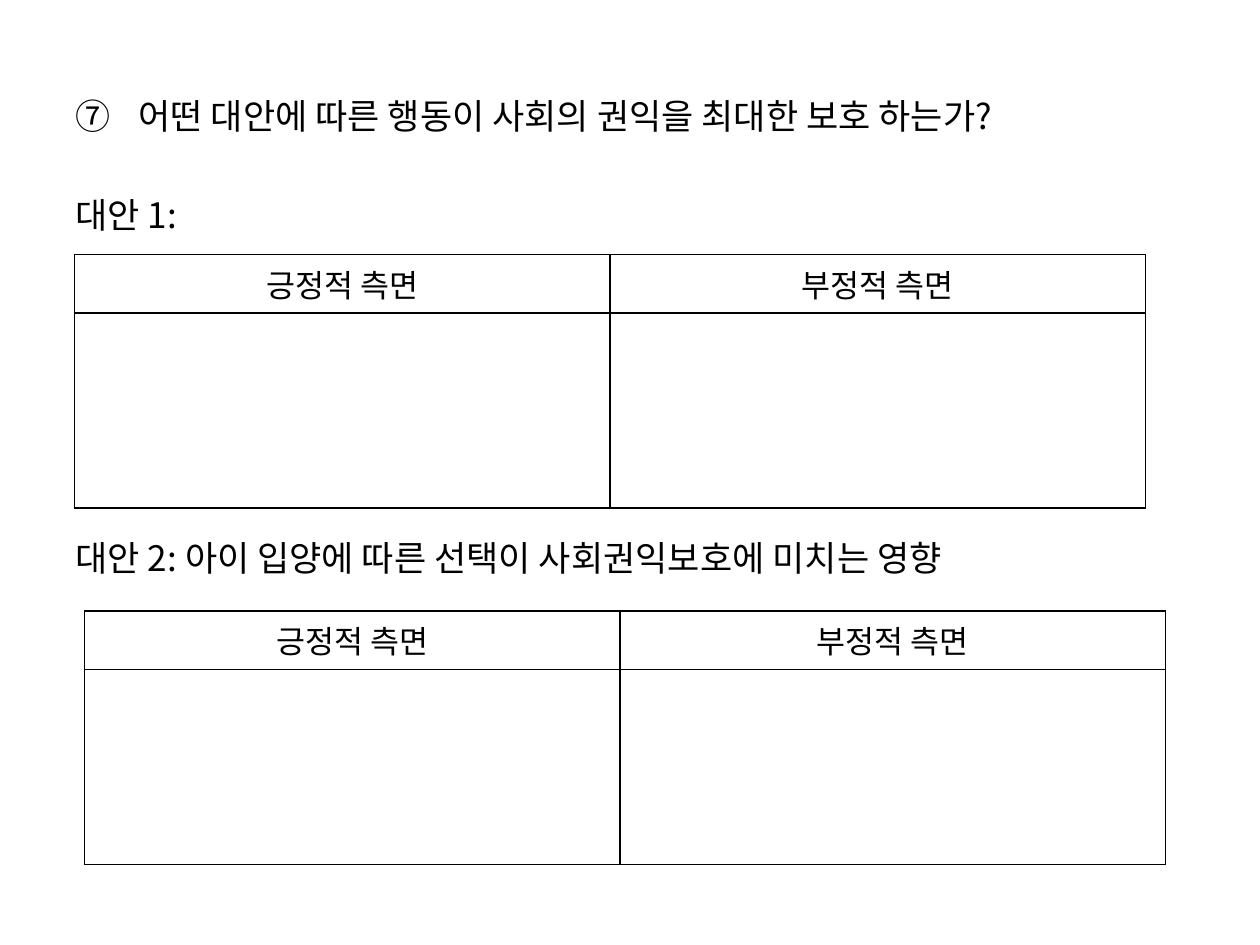
import dataclasses
import pptx
import pptx.dml.color
import pptx.enum.text
import pptx.oxml
import pptx.oxml.ns
import pptx.util

Inches, Pt = pptx.util.Inches, pptx.util.Pt
Align = pptx.enum.text.PP_ALIGN


@dataclasses.dataclass(frozen=True)
class Theme:
    font: str = "Noto Sans CJK KR"
    ink: str = "000000"
    body: int = 20
    head: int = 18
    line: int = 1


@dataclasses.dataclass(frozen=True)
class Grid:
    left: float
    top: float
    cols: tuple[float, ...]


@dataclasses.dataclass(frozen=True)
class Item:
    text: str
    gap: float  # points above the line
    start: int = 0  # circled number, if any


THEME = Theme()
WIDE, HIGH = 10, 7.5
ROWS = (0.46, 1.55)
HEADS = ("긍정적 측면", "부정적 측면")
ITEMS = (
    Item("어떤 대안에 따른 행동이 사회의 권익을 최대한 보호 하는가?", 2, start=7),
    Item("대안 1:", 32.4),
    Item("대안 2: 아이 입양에 따른 선택이 사회권익보호에 미치는 영향", 172.4),
)
GRIDS = (Grid(0.59, 2.02, (4.25, 4.25)), Grid(0.67, 4.85, (4.25, 4.33)))


def add_tag(parent, tag: str, **attrs):
    node = pptx.oxml.parse_xml(f"<{tag} {pptx.oxml.ns.nsdecls('a')}/>")
    for key, value in attrs.items():
        node.set(key, str(value))
    parent.append(node)
    return node


def write(para, text: str, *, size: int, align=Align.LEFT, gap: float = 0):
    para.alignment = align
    para.space_before = Pt(gap)
    para.line_spacing = 1.0
    run = para.add_run()
    run.text = text
    run.font.size = Pt(size)
    run.font.name = THEME.font
    run.font.color.rgb = pptx.dml.color.RGBColor.from_string(THEME.ink)
    run.font._element.set("kern", "0")
    add_tag(run.font._element, "a:ea", typeface=THEME.font)


def set_mark(para, start: int):
    """Number the paragraph with a circled digit, or remove its bullet."""
    props = para._p.get_or_add_pPr()
    hang = Inches(0.5) if start else 0
    props.set("marL", str(hang))
    props.set("indent", str(-hang))
    if start:
        add_tag(props, "a:buFont", typeface=THEME.font)
        add_tag(props, "a:buAutoNum", type="circleNumDbPlain", startAt=start)
    else:
        add_tag(props, "a:buNone")


def fill_body(body, items: tuple[Item, ...]):
    body.left, body.top = Inches(WIDE * 0.05), Inches(0.7)
    body.width, body.height = Inches(WIDE * 0.9), Inches(6.41)
    frame = body.text_frame
    frame.word_wrap = True
    frame.auto_size = pptx.enum.text.MSO_AUTO_SIZE.NONE
    frame.vertical_anchor = pptx.enum.text.MSO_ANCHOR.TOP
    for i, item in enumerate(items):
        para = frame.add_paragraph() if i else frame.paragraphs[0]
        write(para, item.text, size=THEME.body, gap=item.gap)
        set_mark(para, item.start)


def add_edges(cell):
    props = cell._tc.get_or_add_tcPr()
    for side in ("lnL", "lnR", "lnT", "lnB"):
        edge = add_tag(props, f"a:{side}", w=Pt(THEME.line))
        add_tag(add_tag(edge, "a:solidFill"), "a:srgbClr", val=THEME.ink)


def draw_grid(slide, grid: Grid):
    frame = slide.shapes.add_table(
        len(ROWS), len(grid.cols), Inches(grid.left), Inches(grid.top),
        Inches(sum(grid.cols)), Inches(sum(ROWS)))
    table = frame.table
    table.first_row = table.horz_banding = False
    for col, width in zip(table.columns, grid.cols):
        col.width = Inches(width)
    for row, height in zip(table.rows, ROWS):
        row.height = Inches(height)
    for cell in table.iter_cells():
        add_edges(cell)
        cell.fill.background()
    for cell, head in zip(table.rows[0].cells, HEADS):
        write(cell.text_frame.paragraphs[0], head, size=THEME.head, align=Align.CENTER)


def main():
    deck = pptx.Presentation()
    deck.slide_width, deck.slide_height = Inches(WIDE), Inches(HIGH)
    slide = deck.slides.add_slide(deck.slide_layouts[1])
    title = slide.shapes.title._element
    title.getparent().remove(title)
    fill_body(slide.placeholders[1], ITEMS)
    for grid in GRIDS:
        draw_grid(slide, grid)
    deck.save("out.pptx")


if __name__ == "__main__":
    main()
